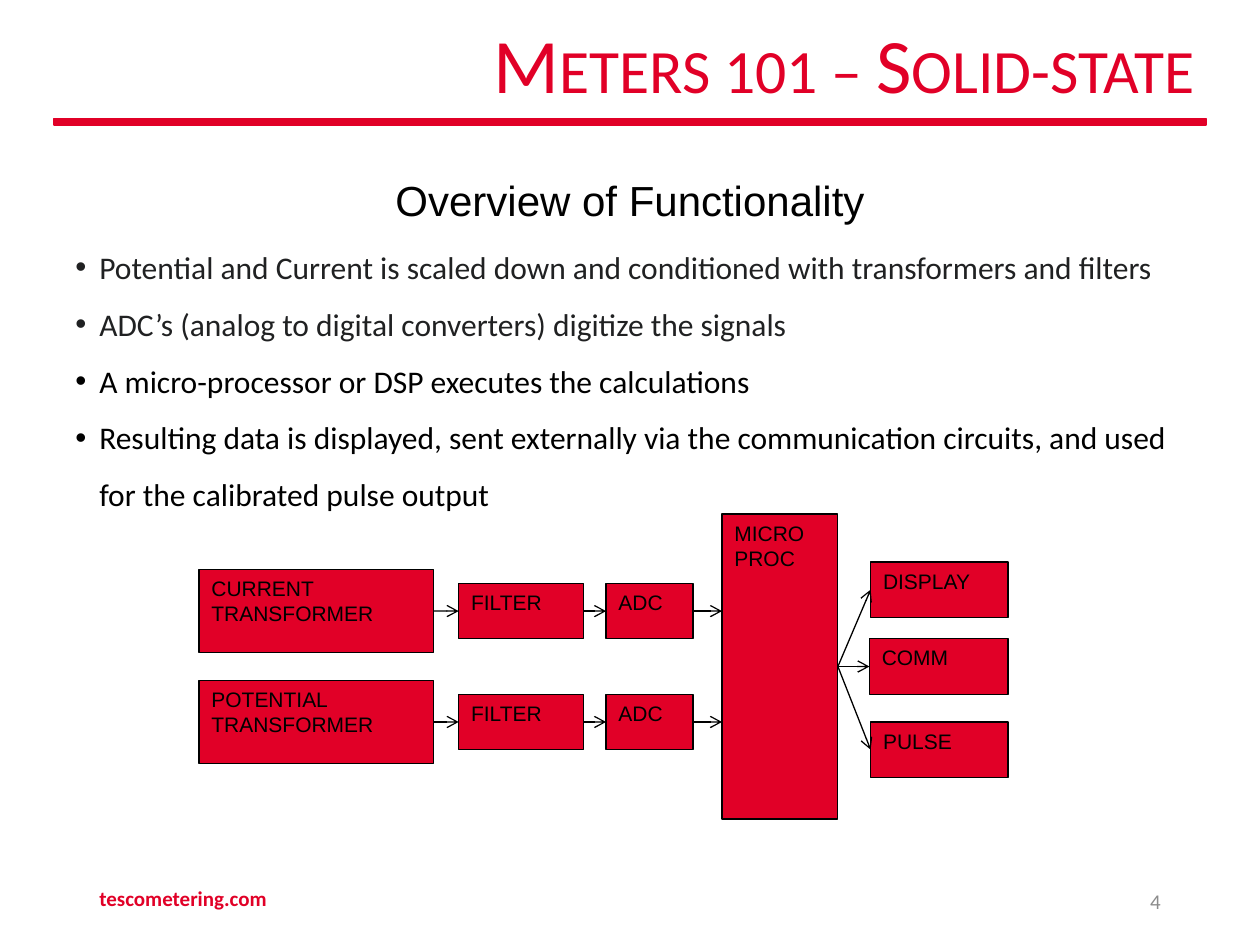
from lxml import etree
from pptx import Presentation
from pptx import util as u
from pptx.dml.color import RGBColor
from pptx.enum import shapes, text
from pptx.oxml.ns import qn

COLORS = {"red": "E10027", "black": "000000", "body": "202122", "gray": "8C8C8C"}
TITLE = "Meters 101 – Solid-state"
SUBTITLE = "Overview of Functionality"
BULLETS = [
    ("Potential and Current is scaled down and conditioned with transformers and filters", "body"),
    ("ADC’s (analog to digital converters) digitize the signals", "body"),
    ("A micro-processor or DSP executes the calculations", "black"),
    ("Resulting data is displayed, sent externally via the communication circuits, "
     "and used for the calibrated pulse output", "black"),
]
FOOTER = "tescometering.com"
PAGE_NUMBER = "4"

CHANNELS = [("CURRENT TRANSFORMER", 4.85), ("POTENTIAL TRANSFORMER", 5.73)]
STAGES = [(None, 1.58, 1.86, 0.66), ("FILTER", 3.64, 0.99, 0.44), ("ADC", 4.81, 0.69, 0.44)]
PROCESSOR = (["MICRO", "PROC"], 5.73, 4.08, 0.92, 2.42)
OUTPUTS = [("DISPLAY", 6.91, 4.68), ("COMM", 6.9, 5.29), ("PULSE", 6.91, 5.95)]
OUTPUT_RIGHT, OUTPUT_HEIGHT = 8, 0.44
TOP, LEFT, BOTTOM, RIGHT = range(4)


def color(name):
    return RGBColor.from_string(COLORS[name])


def add_run(paragraph, content, size, font, tint, bold=False):
    run = paragraph.add_run()
    run.text = content
    run.font.size = u.Pt(size)
    run.font.name = font
    run.font.bold = bold
    run.font.color.rgb = color(tint)
    return run


def add_rectangle(slide, left, top, width, height, line="black", weight=0.75):
    shape = slide.shapes.add_shape(
        shapes.MSO_SHAPE.RECTANGLE, *map(u.Inches, (left, top, width, height)))
    shape.shadow.inherit = False
    shape.fill.solid()
    shape.fill.fore_color.rgb = color("red")
    shape.line.color.rgb = color(line)
    shape.line.width = u.Pt(weight)
    return shape


def add_block(slide, lines, left, top, width, height):
    block = add_rectangle(slide, left, top, width, height)
    frame = block.text_frame
    frame.word_wrap = True
    frame.vertical_anchor = text.MSO_ANCHOR.TOP
    for index, line in enumerate(lines):
        paragraph = frame.add_paragraph() if index else frame.paragraphs[0]
        paragraph.alignment = text.PP_ALIGN.LEFT
        add_run(paragraph, line, 12, "Arial", "black")
    return block


def add_arrow(slide, source, target, end=None):
    begin = (source.left + source.width, source.top + source.height // 2)
    finish = end or (target.left, target.top + target.height // 2)
    arrow = slide.shapes.add_connector(shapes.MSO_CONNECTOR.STRAIGHT, *begin, *finish)
    arrow.begin_connect(source, RIGHT)
    if end is None:
        arrow.end_connect(target, LEFT)
    arrow.line.color.rgb = color("black")
    arrow.line.width = u.Pt(0.75)
    etree.SubElement(arrow.line._get_or_add_ln(), qn("a:tailEnd"), type="arrow")
    etree.SubElement(arrow._element.spPr, qn("a:effectLst"))


def add_text_box(slide, left, top, width, height, anchor=text.MSO_ANCHOR.MIDDLE):
    box = slide.shapes.add_textbox(*map(u.Inches, (left, top, width, height)))
    box.text_frame.word_wrap = True
    box.text_frame.vertical_anchor = anchor
    return box.text_frame


def add_label(slide, place, content, size, font, tint, alignment, bold=False):
    paragraph = add_text_box(slide, *place).paragraphs[0]
    paragraph.alignment = alignment
    add_run(paragraph, content, size, font, tint, bold)


def add_title(slide):
    title = slide.shapes.title
    title.left, title.top, title.width, title.height = map(u.Inches, (1.7, 0.17, 7.88, 0.74))
    frame = title.text_frame
    frame.word_wrap = True
    frame.auto_size = text.MSO_AUTO_SIZE.NONE
    frame.vertical_anchor = text.MSO_ANCHOR.MIDDLE
    paragraph = frame.paragraphs[0]
    paragraph.alignment = text.PP_ALIGN.RIGHT
    paragraph.line_spacing = 0.9
    run = add_run(paragraph, TITLE, 44, "Calibri", "red")
    run._r.get_or_add_rPr().set("cap", "small")


def add_bullets(slide):
    frame = add_text_box(slide, 0.5, 1.8, 9, 2.56, text.MSO_ANCHOR.TOP)
    frame.margin_top = u.Inches(0.02)
    for index, (content, tint) in enumerate(BULLETS):
        paragraph = frame.add_paragraph() if index else frame.paragraphs[0]
        paragraph.line_spacing = 1.5
        properties = paragraph._p.get_or_add_pPr()
        properties.set("marL", str(u.Inches(0.19)))
        properties.set("indent", str(u.Inches(-0.19)))
        etree.SubElement(properties, qn("a:buFont"), typeface="Arial")
        etree.SubElement(properties, qn("a:buChar"), char="•")
        add_run(paragraph, content, 18, "Calibri", tint)


def add_diagram(slide):
    processor = add_block(slide, *PROCESSOR)
    for name, middle in CHANNELS:
        blocks = [add_block(slide, [label or name], left, middle - height / 2, width, height)
                  for label, left, width, height in STAGES]
        for source, target in zip(blocks, blocks[1:]):
            add_arrow(slide, source, target)
        add_arrow(slide, blocks[-1], processor, (processor.left, u.Inches(middle)))
    for label, left, middle in OUTPUTS:
        output = add_block(slide, [label], left, middle - OUTPUT_HEIGHT / 2,
                           OUTPUT_RIGHT - left, OUTPUT_HEIGHT)
        add_arrow(slide, processor, output)


def main():
    presentation = Presentation()
    presentation.slide_width, presentation.slide_height = u.Inches(10), u.Inches(7.5)
    slide = presentation.slides.add_slide(presentation.slide_layouts[5])
    add_rectangle(slide, 0.43, 0.94, 9.14, 0.05, "red", 1)
    add_title(slide)
    add_diagram(slide)
    add_label(slide, (2.46, 1.33, 5.08, 0.51), SUBTITLE, 24, "Arial", "black",
              text.PP_ALIGN.CENTER)
    add_bullets(slide)
    add_label(slide, (0.69, 6.93, 3.38, 0.4), FOOTER, 12, "Calibri", "red",
              text.PP_ALIGN.LEFT, True)
    add_label(slide, (7.06, 6.95, 2.25, 0.4), PAGE_NUMBER, 12, "Calibri", "gray",
              text.PP_ALIGN.RIGHT)
    presentation.save("out.pptx")


if __name__ == "__main__":
    main()
